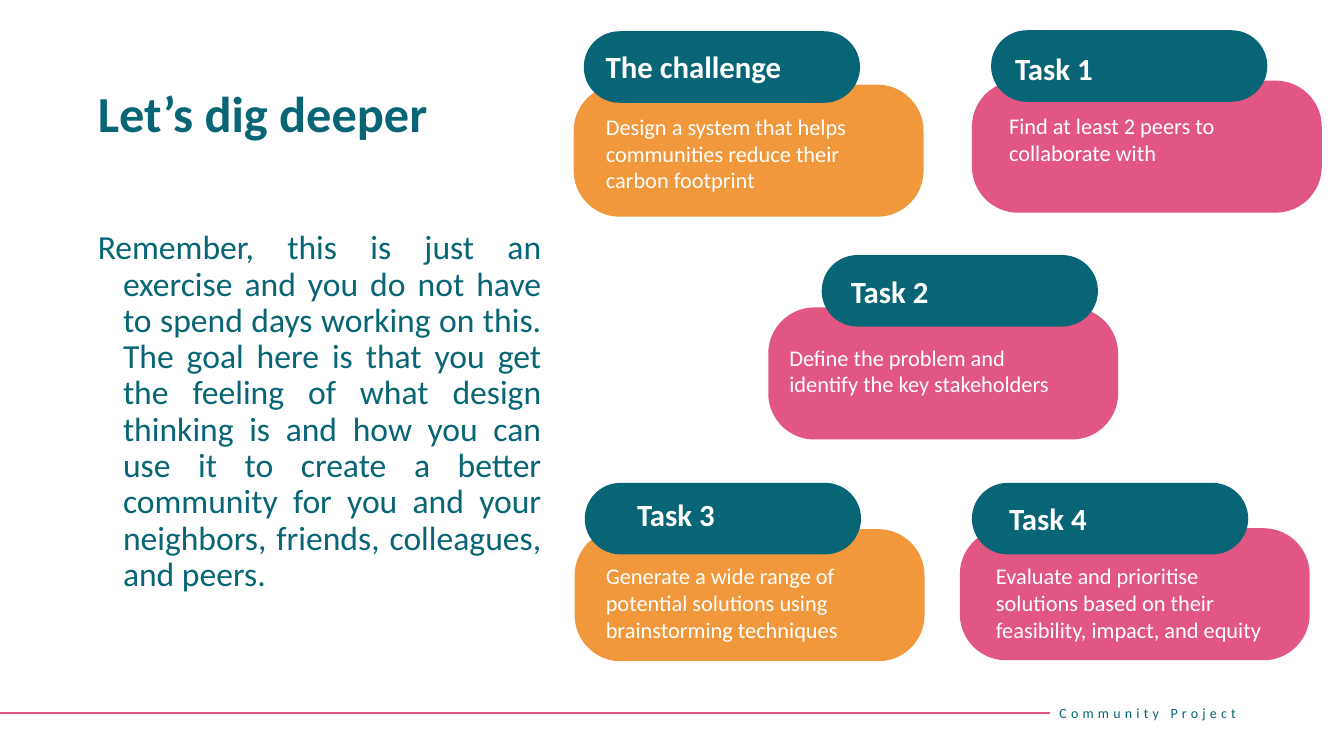
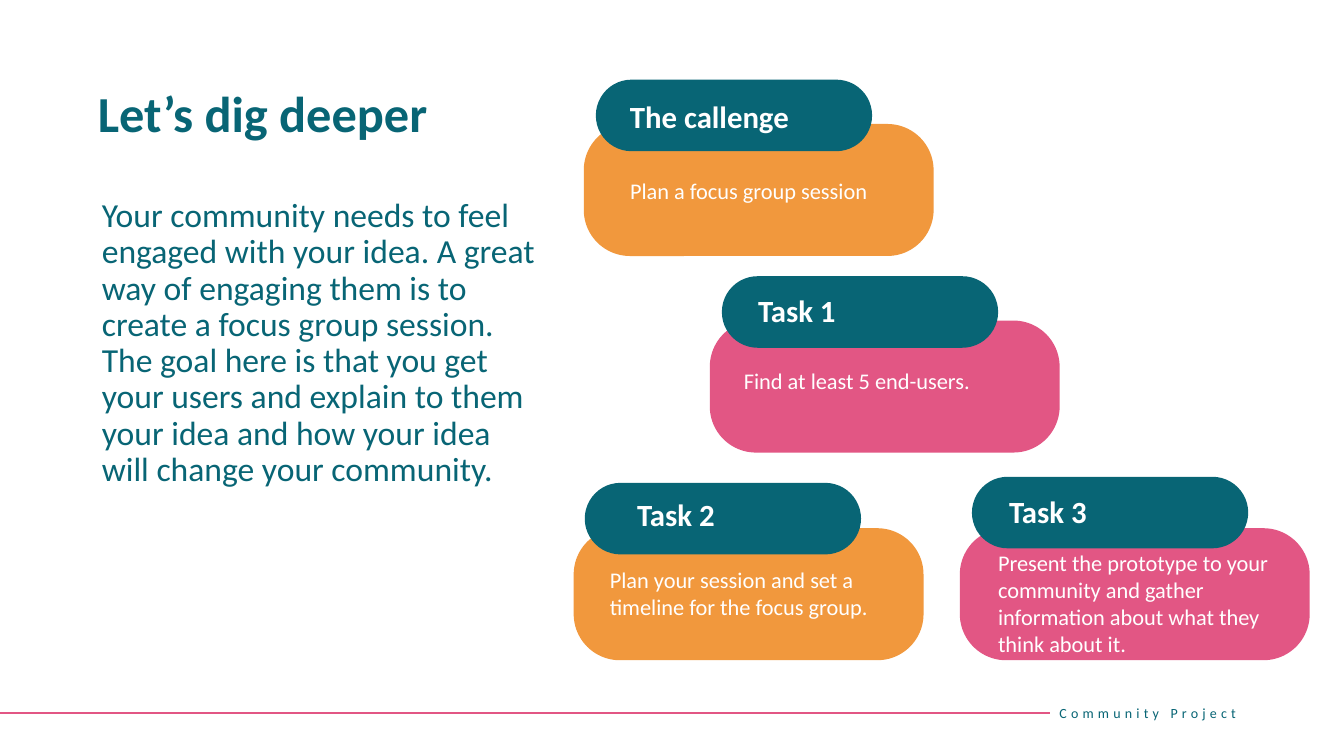
from dataclasses import dataclass

from lxml import etree
from pptx import Presentation
from pptx import util as u
from pptx.dml.color import RGBColor
from pptx.enum import shapes, text
from pptx.oxml import ns


@dataclass(frozen=True)
class Theme:
    teal: RGBColor = RGBColor.from_string("086575")
    pink: RGBColor = RGBColor.from_string("E25684")
    orange: RGBColor = RGBColor.from_string("F1983D")
    white: RGBColor = RGBColor.from_string("FFFFFF")
    font: str = "Calibri"
    title_size: int = 36
    body_size: int = 24
    label_size: int = 22
    note_size: int = 16
    footer_size: int = 10


THEME = Theme()
PANEL_SIZE = (3.47, 1.31)
TAB_SIZE = (2.74, 0.71)
LABEL_SIZE = (2.33, 0.47)


@dataclass(frozen=True)
class Card:
    """A panel with a tab; tab, label and note are offsets from the panel's corner."""
    label: str
    note: str
    color: RGBColor
    panel: tuple
    tab: tuple
    label_at: tuple
    note_at: tuple
    note_width: float = 2.85


@dataclass(frozen=True)
class Page:
    body: str
    body_box: tuple
    justified: bool
    hanging: float
    cards: tuple


PAGES = (
    Page(
        "Remember, this is just an exercise and you do not have to spend days "
        "working on this. The goal here is that you get the feeling of what design "
        "thinking is and how you can use it to create a better community for you "
        "and your neighbors, friends, colleagues, and peers.",
        (0.87, 2.24, 4.6, 4.21), True, 0.25,
        (
            Card("The challenge",
                 "Design a system that helps communities reduce their carbon footprint",
                 THEME.orange, (5.69, 0.84), (0.1, -0.53), (0.22, -0.42), (0.22, 0.23)),
            Card("Task 1", "Find at least 2 peers to collaborate with",
                 THEME.pink, (9.64, 0.8), (0.19, -0.5), (0.33, -0.36), (0.27, 0.26)),
            Card("Task 2", "Define the problem and identify the key stakeholders",
                 THEME.pink, (7.62, 3.05), (0.53, -0.52), (0.72, -0.39), (0.11, 0.31)),
            Card("Task 3",
                 "Generate a wide range of potential solutions using "
                 "brainstorming techniques",
                 THEME.orange, (5.7, 5.25), (0.1, -0.46), (0.52, -0.38), (0.21, 0.28)),
            Card("Task 4",
                 "Evaluate and prioritise solutions based on their feasibility, "
                 "impact, and equity",
                 THEME.pink, (9.52, 5.24), (0.12, -0.45), (0.39, -0.33), (0.26, 0.29)),
        ),
    ),
    Page(
        "Your community needs to feel engaged with your idea. A great way of "
        "engaging them is to create a focus group session. The goal here is that "
        "you get your users and explain to them your idea and how your idea will "
        "change your community.",
        (0.91, 1.92, 4.56, 4.52), False, 0,
        (
            Card("The callenge", "Plan a focus group session",
                 THEME.orange, (5.79, 1.23), (0.12, -0.44), (0.36, -0.31), (0.36, 0.48)),
            Card("Task 1", "Find at least 5 end-users.",
                 THEME.pink, (7.04, 3.18), (0.12, -0.44), (0.38, -0.34), (0.24, 0.41),
                 3.16),
            Card("Task 2", "Plan your session and set a timeline for the focus group.",
                 THEME.orange, (5.69, 5.24), (0.11, -0.45), (0.53, -0.37), (0.26, 0.33),
                 2.93),
            Card("Task 3",
                 "Present the prototype to your community and gather information "
                 "about what they think about it.",
                 THEME.pink, (9.52, 5.24), (0.12, -0.51), (0.39, -0.4), (0.28, 0.16),
                 3.19),
        ),
    ),
)


def inches(*lengths):
    return [u.Inches(length) for length in lengths]


def write(frame, words, size, color, bold=False):
    frame.word_wrap = True
    frame.auto_size = text.MSO_AUTO_SIZE.NONE
    frame.vertical_anchor = text.MSO_ANCHOR.TOP
    para = frame.paragraphs[0]
    para.alignment = text.PP_ALIGN.LEFT
    span = para.add_run()
    span.text = words
    span.font.name = THEME.font
    span.font.size = u.Pt(size)
    span.font.bold = bold
    span.font.color.rgb = color
    return para, span


def add_text(page, box, words, size, color, bold=False):
    frame = page.shapes.add_textbox(*inches(*box)).text_frame
    return frame, write(frame, words, size, color, bold)[1]


def fill_placeholder(holder, box, words, size, bold=False):
    holder.left, holder.top, holder.width, holder.height = inches(*box)
    para, _ = write(holder.text_frame, words, size, THEME.teal, bold)
    para.line_spacing = 0.9
    para.space_before = u.Pt(0)
    return para


def add_body(page, content):
    para = fill_placeholder(page.placeholders[1], content.body_box, content.body,
                            THEME.body_size)
    if content.justified:
        para.alignment = text.PP_ALIGN.JUSTIFY
    settings = para._p.get_or_add_pPr()
    settings.set("marL", str(u.Inches(content.hanging)))
    settings.set("indent", str(-u.Inches(content.hanging)))
    etree.SubElement(settings, ns.qn("a:buNone"))


def add_rounded(page, corner, size, color, rounding):
    shape = page.shapes.add_shape(shapes.MSO_SHAPE.ROUNDED_RECTANGLE,
                                  *inches(*corner, *size))
    shape.adjustments[0] = rounding
    shape.shadow.inherit = False
    shape.fill.solid()
    shape.fill.fore_color.rgb = color
    shape.line.fill.background()


def add_card(page, card):
    def place(offset):
        return tuple(start + shift for start, shift in zip(card.panel, offset))

    add_rounded(page, card.panel, PANEL_SIZE, card.color, 0.35)
    add_rounded(page, place(card.tab), TAB_SIZE, THEME.teal, 0.5)
    add_text(page, place(card.label_at) + LABEL_SIZE, card.label,
             THEME.label_size, THEME.white, bold=True)
    add_text(page, place(card.note_at) + (card.note_width, 0.91), card.note,
             THEME.note_size, THEME.white)


def add_footer(page, left=10.41, middle=7.07):
    frame, span = add_text(page, (left, middle - 0.2, 2.73, 0.4), "Community Project",
                           THEME.footer_size, THEME.teal)
    frame.vertical_anchor = text.MSO_ANCHOR.MIDDLE
    span._r.get_or_add_rPr().set("spc", "300")
    rule = page.shapes.add_connector(shapes.MSO_CONNECTOR.STRAIGHT,
                                     *inches(0, middle, left, middle))
    rule.line.color.rgb = THEME.pink
    rule.line.width = u.Pt(1.5)
    etree.SubElement(rule._element.spPr, ns.qn("a:effectLst"))


def add_task_page(deck, content):
    page = deck.slides.add_slide(deck.slide_layouts[1])
    add_footer(page)
    fill_placeholder(page.shapes.title, (0.87, 0.83, 4.6, 0.88), "Let’s dig deeper",
                     THEME.title_size, bold=True)
    add_body(page, content)
    for card in content.cards:
        add_card(page, card)


def main():
    deck = Presentation()
    deck.slide_width, deck.slide_height = inches(13.33, 7.5)
    for content in PAGES:
        add_task_page(deck, content)
    deck.save("out.pptx")


if __name__ == "__main__":
    main()
